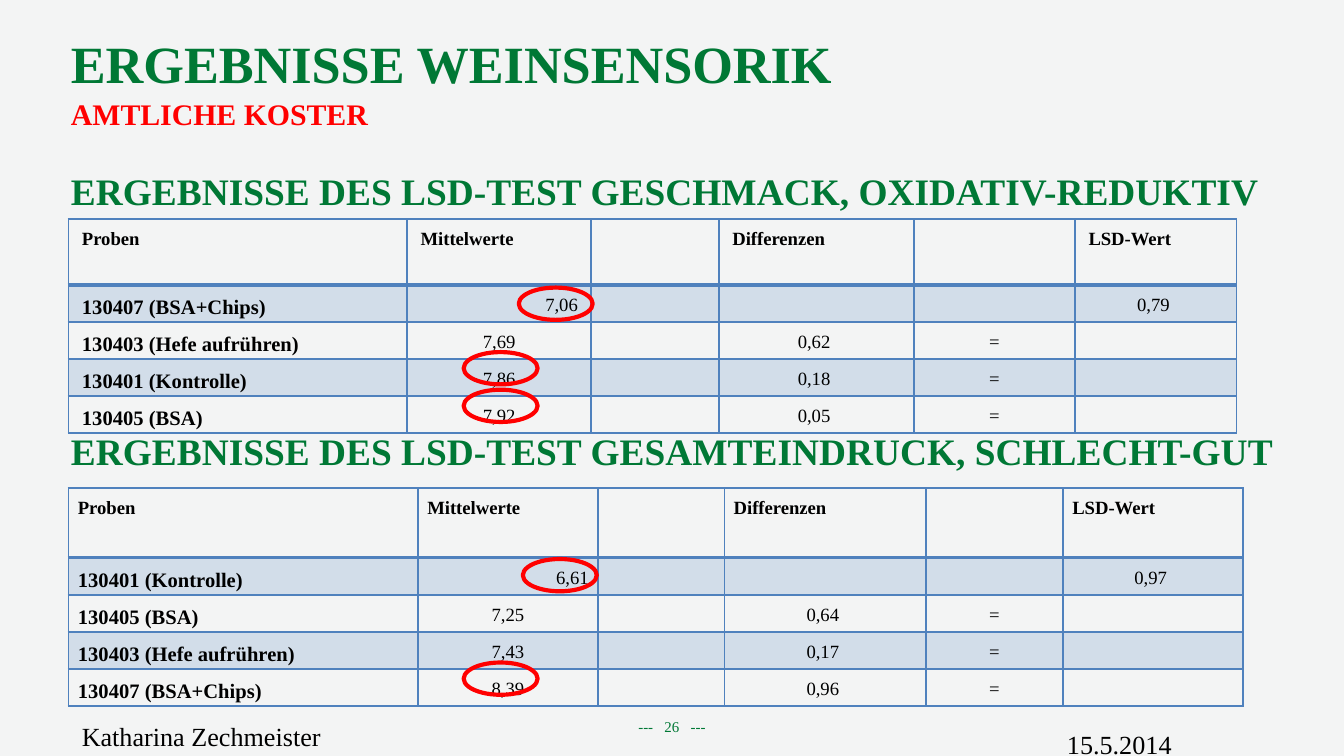
from lxml import etree
from pptx import Presentation
from pptx import util as u
from pptx.dml.color import RGBColor
from pptx.enum import shapes, text
from pptx.oxml import ns

Inches, Pt = u.Inches, u.Pt
COLORS = {"background": "F3F4F4", "green": "007835", "red": "FF0000",
          "black": "000000", "blue": "4F81BD"}
LEFT, CENTER, RIGHT = text.PP_ALIGN.LEFT, text.PP_ALIGN.CENTER, text.PP_ALIGN.RIGHT
LIGHT_GRID_STYLE = "{BC89EF96-8CEA-46FF-86C4-4CE0E7609802}"  # thin blue grid lines


def write(paragraph, content, size, color="black", bold=False, align=LEFT,
          before=0, line_spacing=None):
    paragraph.alignment = align
    paragraph.space_before = Pt(before)
    if line_spacing:
        paragraph.line_spacing = line_spacing
    run = paragraph.add_run()
    run.text = content
    run.font.name = "Times New Roman"
    run.font.size = Pt(size)
    run.font.bold = bold
    run.font.color.rgb = RGBColor.from_string(COLORS[color])
    return run


def add_border(cell, side, width):
    """Draw one side (L, R, T or B) of a cell, before its fill is set."""
    properties = cell._tc.get_or_add_tcPr()
    line = etree.SubElement(properties, ns.qn(f"a:ln{side}"), w=str(Pt(width)))
    fill = etree.SubElement(line, ns.qn("a:solidFill"))
    etree.SubElement(fill, ns.qn("a:srgbClr"), val=COLORS["blue"])


presentation = Presentation()
presentation.slide_width = Inches(10)
presentation.slide_height = Inches(10) * 9 // 16
slide = presentation.slides.add_slide(presentation.slide_layouts[6])
slide.background.fill.solid()
slide.background.fill.fore_color.rgb = RGBColor.from_string(COLORS["background"])

# Headings: text, size, colour, space before
headings = [
    ("ERGEBNISSE WEINSENSORIK", 28, "green", 0),
    ("AMTLICHE KOSTER", 16, "red", 1),
    ("ERGEBNISSE DES LSD-TEST GESCHMACK, OXIDATIV-REDUKTIV", 20, "green", 19.5),
    ("ERGEBNISSE DES LSD-TEST GESAMTEINDRUCK, SCHLECHT-GUT", 20, "green", 115.5),
]
title = slide.shapes.add_textbox(Inches(0.43), Inches(0.23), Inches(9.3), Inches(4.93))
frame = title.text_frame
frame.word_wrap = True
frame.margin_top = 0
for index, (content, size, color, before) in enumerate(headings):
    paragraph = frame.add_paragraph() if index else frame.paragraphs[0]
    write(paragraph, content, size, color, bold=True, before=before)

# Tables
header = ["Proben", "Mittelwerte", "", "Differenzen", "", "LSD-Wert"]
tables = [
    {"top": 1.63, "header_height": 0.49, "margin": 0.1,
     "columns": [2.52, 1.37, 0.95, 1.45, 1.2, 1.2],
     "rows": [["130407 (BSA+Chips)", "7,06", "", "", "", "0,79 "],
              ["130403 (Hefe aufrühren)", "7,69", "", "0,62 ", "=", ""],
              ["130401 (Kontrolle)", "7,86", "", "0,18 ", "=", ""],
              ["130405 (BSA)", "7,92", "", "0,05 ", "=", ""]]},
    {"top": 3.63, "header_height": 0.52, "margin": 0.07,
     "columns": [2.6, 1.34, 0.94, 1.5, 1.02, 1.34],
     "rows": [["130401 (Kontrolle)", "6,61", "", "", "", "0,97 "],
              ["130405 (BSA)", "7,25", "", "0,64 ", "=", ""],
              ["130403 (Hefe aufrühren)", "7,43", "", "0,17 ", "=", ""],
              ["130407 (BSA+Chips)", "8,39", "", "0,96 ", "=", ""]]},
]
for data in tables:
    rows = [header] + data["rows"]
    heights = [data["header_height"]] + [0.26] * len(data["rows"])
    table = slide.shapes.add_table(
        len(rows), len(header), Inches(0.51), Inches(data["top"]),
        Inches(sum(data["columns"])), Inches(sum(heights))).table
    table._tbl.tblPr.find(ns.qn("a:tableStyleId")).text = LIGHT_GRID_STYLE
    for column, width in zip(table.columns, data["columns"]):
        column.width = Inches(width)
    for r, values in enumerate(rows):
        table.rows[r].height = Inches(heights[r])
        for c, value in enumerate(values):
            cell = table.cell(r, c)
            cell.margin_left = cell.margin_right = Inches(data["margin"])
            cell.margin_top = cell.margin_bottom = 0
            if r == 0:
                for side in "LRTB":
                    add_border(cell, side, 2 if side == "B" else 1)
            if r % 2:
                cell.fill.solid()
                cell.fill.fore_color.rgb = RGBColor.from_string(COLORS["blue"])
                tint = cell._tc.tcPr.find(f"{ns.qn('a:solidFill')}/{ns.qn('a:srgbClr')}")
                etree.SubElement(tint, ns.qn("a:alpha"), val="20000")
            else:
                cell.fill.background()
            paragraph = cell.text_frame.paragraphs[0]
            if not value:  # keeps an empty cell from stretching its row
                paragraph._p.get_or_add_endParaRPr().set("sz", "1000")
                continue
            align = LEFT if r == 0 or c == 0 else RIGHT if (r, c) == (1, 1) else CENTER
            write(paragraph, value, 11 if r and c == 0 else 10,
                  bold=r == 0 or c == 0, align=align, line_spacing=1.5)

# Footer
footers = [
    (4.31, 5.29, 1.38, 0.19, ["---", " ", "26", " ", "---"], 8, "green", CENTER),
    (7.84, 5.37, 1.89, 0.39, ["15.5.2014"], 14, "black", LEFT),
    (0.51, 5.31, 4.88, 0.39, ["Katharina Zechmeister"], 14, "black", LEFT),
]
for left, top, width, height, parts, size, color, align in footers:
    box = slide.shapes.add_textbox(Inches(left), Inches(top), Inches(width), Inches(height))
    box.text_frame.word_wrap = True
    for part in parts:
        run = write(box.text_frame.paragraphs[0], part, size, color, align=align)
        if part == " ":
            run.font._element.set("spc", "400")

# Rings around the marked mean values
for left, top in [(3.89, 4.16), (3.45, 4.93), (3.45, 2.62), (3.45, 2.9), (3.86, 2.14)]:
    ring = slide.shapes.add_shape(shapes.MSO_SHAPE.OVAL, Inches(left), Inches(top),
                                  Inches(0.55), Inches(0.24))
    ring.shadow.inherit = False
    ring.fill.background()
    ring.line.color.rgb = RGBColor.from_string(COLORS["red"])
    ring.line.width = Pt(2.25)

presentation.save("out.pptx")
